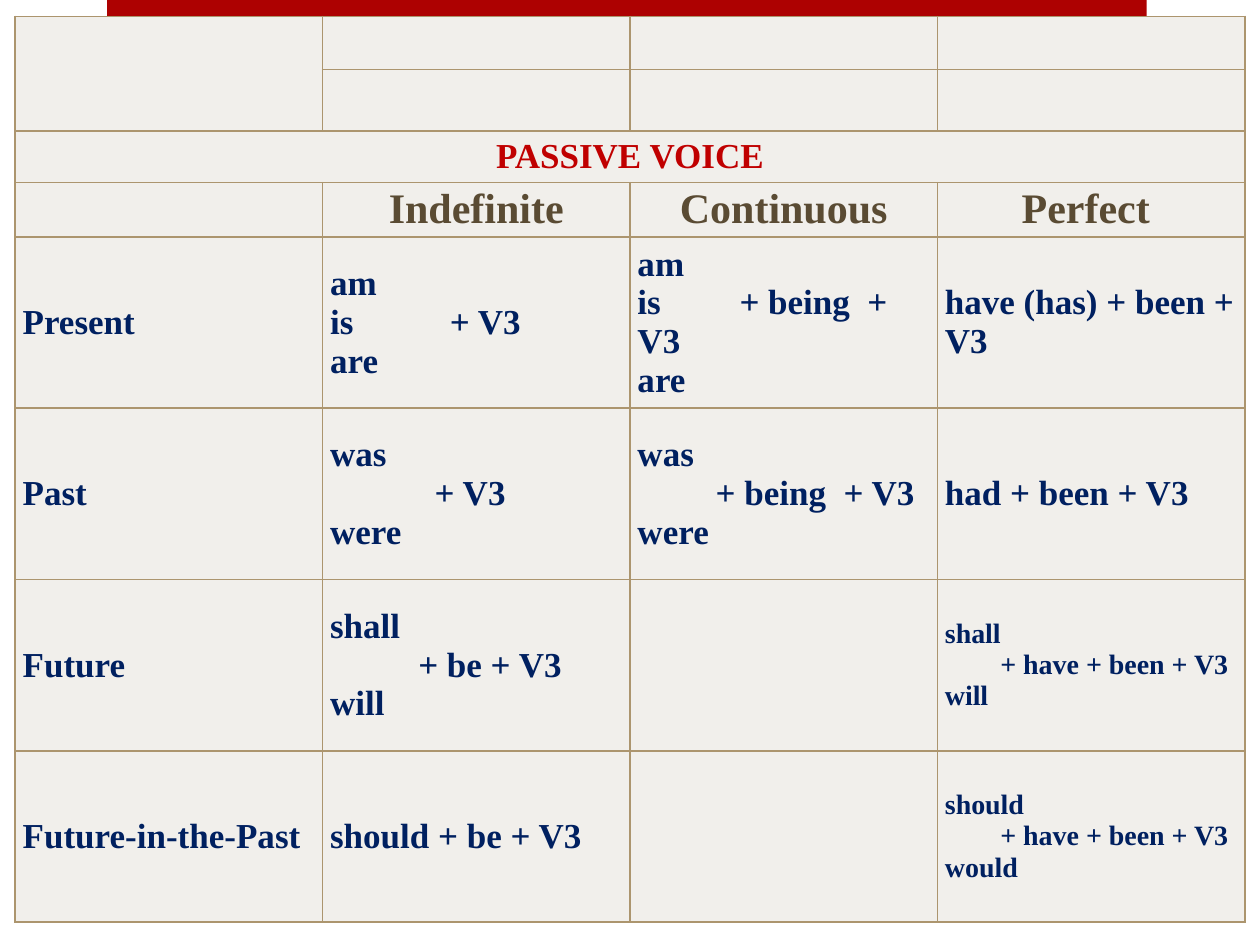
from dataclasses import dataclass
from lxml.etree import SubElement
from pptx import Presentation
from pptx.dml.color import RGBColor
from pptx.enum.shapes import MSO_SHAPE
from pptx.enum.text import MSO_ANCHOR, PP_ALIGN
from pptx.oxml.ns import qn
from pptx.util import Pt

SCALE = 9144


def px(n):
    return n * SCALE


@dataclass(frozen=True)
class Theme:
    font: str = "Times New Roman"
    bar: str = "AD0101"
    line: str = "AC956E"
    cell: str = "F1EFEB"
    title: str = "C00000"
    head: str = "5A4B33"
    body: str = "002060"
    large: int = 24
    normal: int = 20
    small: int = 16


class Deck:
    def __init__(self, theme):
        self.theme = theme
        self.file = Presentation()
        self.file.slide_width, self.file.slide_height = px(1000), px(750)
        self.slide = self.file.slides.add_slide(self.file.slide_layouts[6])

    def bar(self, x, y, w, h):
        shape = self.slide.shapes.add_shape(MSO_SHAPE.RECTANGLE, px(x), px(y), px(w), px(h))
        shape.shadow.inherit = False
        shape.fill.solid()
        shape.fill.fore_color.rgb = RGBColor.from_string(self.theme.bar)
        shape.line.fill.background()

    def table(self, x, y, cols, rows):
        frame = self.slide.shapes.add_table(
            len(rows), len(cols), px(x), px(y), px(sum(cols)), px(sum(rows)))
        table = frame.table
        table.first_row = table.horz_banding = False
        for col, w in zip(table.columns, cols):
            col.width = px(w)
        for row, h in zip(table.rows, rows):
            row.height = px(h)
        for cell in table.iter_cells():
            self.style(cell)
        return table

    def style(self, cell):
        props = cell._tc.get_or_add_tcPr()
        for side in ("L", "R", "T", "B"):
            line = SubElement(props, qn(f"a:ln{side}"), w=str(Pt(1)))
            fill = SubElement(line, qn("a:solidFill"))
            SubElement(fill, qn("a:srgbClr"), val=self.theme.line)
        cell.fill.solid()
        cell.fill.fore_color.rgb = RGBColor.from_string(self.theme.cell)
        cell.margin_left = cell.margin_right = px(6)
        cell.margin_top = cell.margin_bottom = px(3)
        cell.vertical_anchor = MSO_ANCHOR.MIDDLE

    def text(self, cell, words, color, size, align=PP_ALIGN.LEFT, tab=0):
        para = cell.text_frame.paragraphs[0]
        para.text = words
        para.alignment = align
        if tab:
            tabs = SubElement(para._p.get_or_add_pPr(), qn("a:tabLst"))
            SubElement(tabs, qn("a:tab"), pos=str(px(tab)), algn="l")
        font = para.font
        font.name, font.size, font.bold = self.theme.font, Pt(size), True
        font.color.rgb = RGBColor.from_string(color)


def main():
    theme = Theme()
    deck = Deck(theme)
    deck.bar(85, 0, 825, 42)
    table = deck.table(12, 13, [244] * 4, [42, 49, 41, 43] + [136] * 4)
    table.cell(0, 0).merge(table.cell(1, 0))
    table.cell(2, 0).merge(table.cell(2, 3))

    deck.text(table.cell(2, 0), "PASSIVE VOICE", theme.title, theme.normal, PP_ALIGN.CENTER)
    for col, name in enumerate(("Indefinite", "Continuous", "Perfect "), 1):
        deck.text(table.cell(3, col), name, theme.head, theme.large, PP_ALIGN.CENTER)

    tenses = [
        [("Present", 0), ("am \nis\t+ V3 \nare", 95),
         ("am \nis\t+ being  + V3 \nare", 81), ("have (has) + been + V3", 0)],
        [("Past", 0), ("was \n\t+ V3 \nwere", 83),
         ("was \n\t+ being  + V3 \nwere", 62), ("had + been + V3", 0)],
        [("Future", 0), ("shall \n\t+ be + V3 \nwill", 70),
         None, ("shall \n\t+ have + been + V3 \nwill", 44)],
        [("Future-in-the-Past", 0), ("should + be + V3", 0),
         None, ("should \n\t+ have + been + V3 \nwould", 44)],
    ]
    for row, tense in enumerate(tenses, 4):
        for col, entry in enumerate(tense):
            if entry:
                words, tab = entry
                size = theme.small if "have + been" in words else theme.normal
                deck.text(table.cell(row, col), words, theme.body, size, tab=tab)

    deck.file.save("out.pptx")


if __name__ == "__main__":
    main()
